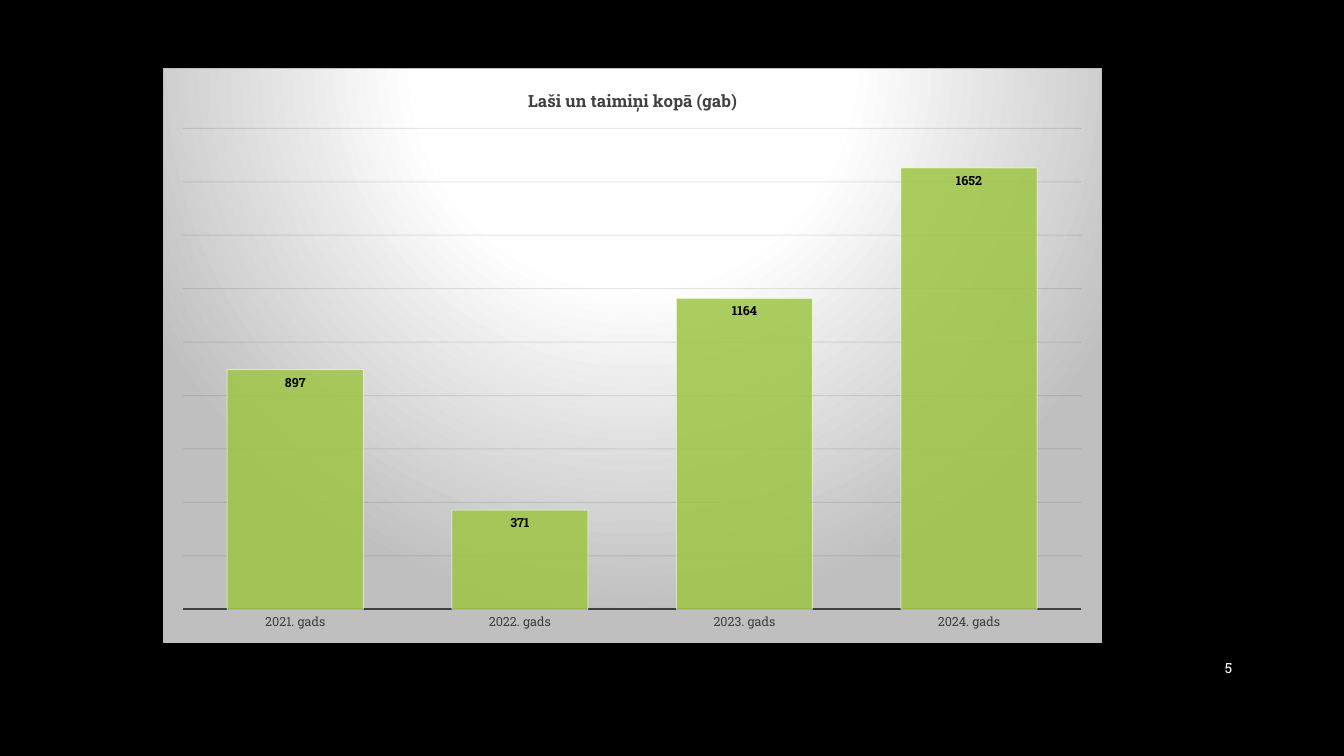
from dataclasses import dataclass

import pptx
import pptx.chart.data
import pptx.dml.color
import pptx.enum.chart
import pptx.enum.text
import pptx.oxml
import pptx.oxml.ns
import pptx.util
from pptx.util import Inches


@dataclass(frozen=True)
class Theme:
    font: str = "Roboto Slab"
    black: str = "000000"
    white: str = "FFFFFF"
    dark: str = "404040"
    grid: str = "0D0D0D"
    silver: str = "BFBFBF"
    green: str = "9EC544"
    title_size: int = 12
    number_size: int = 10
    label_size: int = 9


THEME = Theme()
NAMESPACES = pptx.oxml.ns.nsdecls("a", "c")
PREFIXES = pptx.oxml.ns.namespaces("a", "c")


def rgb(code):
    return pptx.dml.color.RGBColor.from_string(code)


def style_font(font, size, color, bold=False):
    font.name = THEME.font
    font.size = pptx.util.Pt(size)
    font.bold = bold
    font.color.rgb = rgb(color)


def style_line(line, color, width):
    line.color.rgb = rgb(color)
    line.width = pptx.util.Pt(width)


def set_opacity(chart, place, percent):
    """Make the colour under the given XML place partly transparent."""
    color = chart.element.find(f".//c:{place}/a:solidFill/a:srgbClr", PREFIXES)
    color.append(pptx.oxml.parse_xml(f'<a:alpha {NAMESPACES} val="{percent * 1000}"/>'))


def paint_chart_area(chart):
    """Give the chart a radial white-to-silver fill and a thin border."""
    stops = [(0, THEME.white), (39, THEME.white), (100, THEME.silver)]
    stop_xml = "".join(
        f'<a:gs pos="{place * 1000}"><a:srgbClr val="{color}"/></a:gs>'
        for place, color in stops)
    area = pptx.oxml.parse_xml(
        f'<c:spPr {NAMESPACES}><a:gradFill><a:gsLst>{stop_xml}</a:gsLst>'
        '<a:path path="circle">'
        '<a:fillToRect l="50000" t="-80000" r="50000" b="180000"/></a:path></a:gradFill>'
        f'<a:ln w="9525"><a:solidFill><a:srgbClr val="{THEME.silver}"/></a:solidFill></a:ln>'
        '</c:spPr>')
    chart.element.find("c:chart", PREFIXES).addnext(area)


def place_plot(chart, left, top, width, height):
    """Fix the inner plot area, in fractions of the chart."""
    plot_area = chart.element.find("c:chart/c:plotArea", PREFIXES)
    for layout in plot_area.findall("c:layout", PREFIXES):
        plot_area.remove(layout)
    sizes = "".join(f'<c:{name} val="{value}"/>' for name, value in
                    zip("xywh", (left, top, width, height)))
    plot_area.insert(0, pptx.oxml.parse_xml(
        f'<c:layout {NAMESPACES}><c:manualLayout><c:layoutTarget val="inner"/>'
        f'<c:xMode val="edge"/><c:yMode val="edge"/>{sizes}</c:manualLayout></c:layout>'))


def style_axes(chart):
    years = chart.category_axis
    years.major_tick_mark = pptx.enum.chart.XL_TICK_MARK.NONE
    style_line(years.format.line, THEME.dark, 1.5)
    style_font(years.tick_labels.font, THEME.label_size, THEME.dark)

    counts = chart.value_axis
    counts.visible = False
    counts.minimum_scale, counts.maximum_scale, counts.major_unit = 0, 1800, 200
    style_line(counts.major_gridlines.format.line, THEME.grid, 0.75)
    set_opacity(chart, "majorGridlines/c:spPr/a:ln", 10)


def style_columns(plot):
    plot.gap_width = 65
    plot.vary_by_categories = False
    columns = plot.series[0]
    columns.format.fill.solid()
    columns.format.fill.fore_color.rgb = rgb(THEME.green)
    style_line(columns.format.line, THEME.white, 0.75)

    labels = columns.data_labels
    labels.show_value = True
    labels.position = pptx.enum.chart.XL_LABEL_POSITION.INSIDE_END
    style_font(labels.font, THEME.label_size, THEME.black, bold=True)


def add_catch_chart(page, left, top, width, height):
    catch = pptx.chart.data.CategoryChartData()
    catch.categories = [f"{year}. gads" for year in range(2021, 2025)]
    catch.add_series("Series 1", (897, 371, 1164, 1652))
    chart = page.shapes.add_chart(
        pptx.enum.chart.XL_CHART_TYPE.COLUMN_CLUSTERED,
        left, top, width, height, catch).chart
    style_font(chart.font, THEME.number_size, THEME.white)
    chart.has_legend = False

    title = chart.chart_title
    title.include_in_layout = False
    para = title.text_frame.paragraphs[0]
    para.text = "Laši un taimiņi kopā (gab)"
    style_font(para.font, THEME.title_size, THEME.dark, bold=True)

    style_axes(chart)
    style_columns(chart.plots[0])
    set_opacity(chart, "ser/c:spPr", 85)
    set_opacity(chart, "ser/c:spPr/a:ln", 50)
    place_plot(chart, Inches(0.19) / width, Inches(0.6) / height,
               Inches(8.92) / width, Inches(4.78) / height)
    paint_chart_area(chart)


def add_page_number(page, left, top, width, height):
    frame = page.shapes.add_textbox(left, top, width, height).text_frame
    frame.word_wrap = True
    frame.vertical_anchor = pptx.enum.text.MSO_ANCHOR.MIDDLE
    para = frame.paragraphs[0]
    para.text = "5"
    para.alignment = pptx.enum.text.PP_ALIGN.RIGHT
    style_font(para.font, THEME.number_size, THEME.white)


def main():
    deck = pptx.Presentation()
    deck.slide_width, deck.slide_height = Inches(13.33), Inches(7.5)
    page = deck.slides.add_slide(deck.slide_layouts[6])
    page.background.fill.solid()
    page.background.fill.fore_color.rgb = rgb(THEME.black)
    add_catch_chart(page, Inches(1.62), Inches(0.67), Inches(9.31), Inches(5.71))
    add_page_number(page, Inches(11.5), Inches(6.43), Inches(0.82), Inches(0.4))
    deck.save("out.pptx")


if __name__ == "__main__":
    main()
